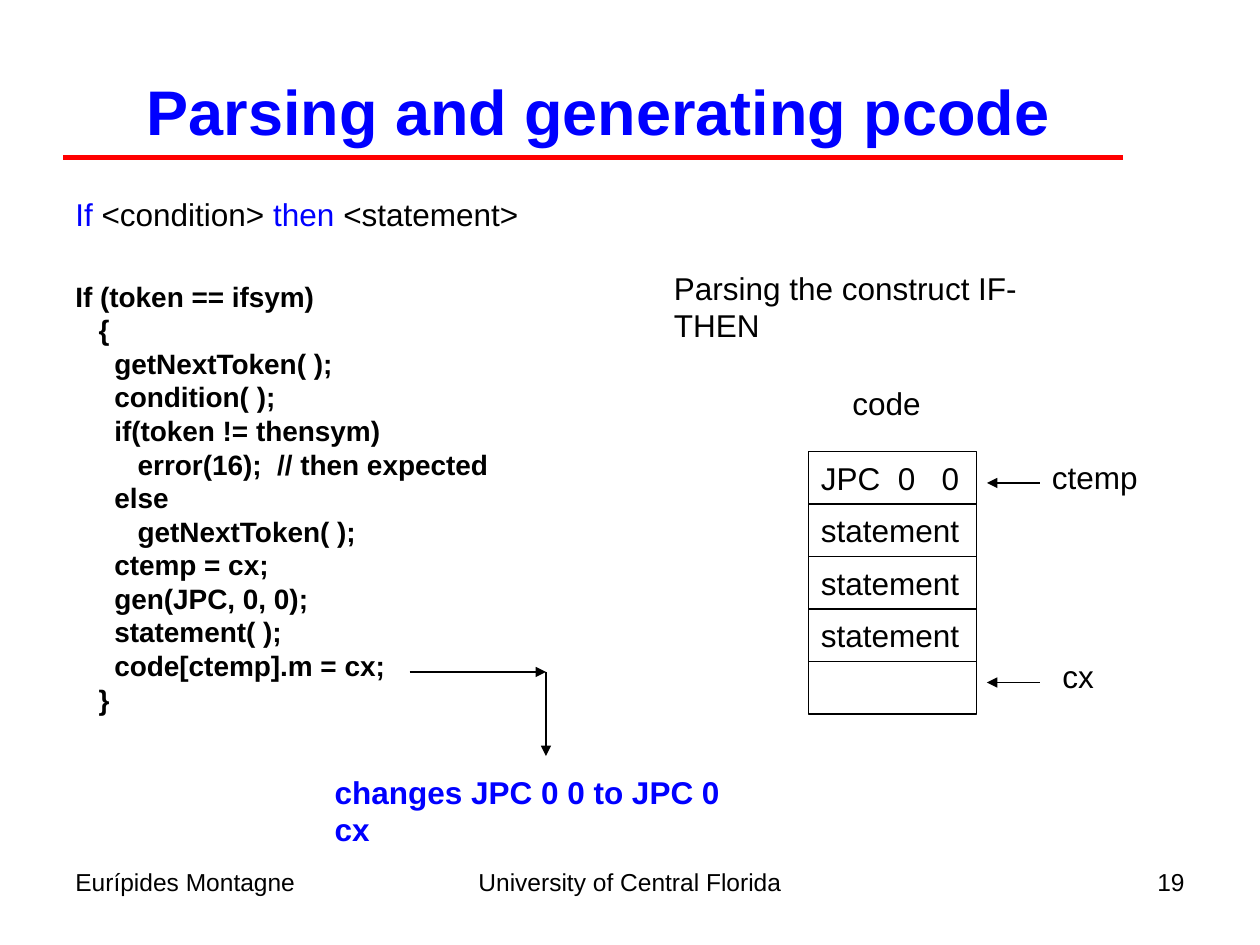
from dataclasses import dataclass

from lxml import etree
from pptx import Presentation
from pptx import util as u
from pptx.dml.color import RGBColor
from pptx.enum import shapes, text
from pptx.oxml.ns import qn

BLACK = RGBColor(0x00, 0x00, 0x00)
BLUE = RGBColor(0x00, 0x00, 0xFF)
RED = RGBColor(0xFF, 0x00, 0x00)
FONT = "Arial"
LEFT, CENTER, RIGHT = text.PP_ALIGN.LEFT, text.PP_ALIGN.CENTER, text.PP_ALIGN.RIGHT

# The slide is a grid of 120 columns by 90 rows
COLUMNS, ROWS = 120, 90
LABEL_ROWS = 4.8
SPACE_WIDTH = 4.45  # points, one space of the bold 16 pt code


@dataclass(frozen=True)
class Label:
    words: str
    col: float
    row: float
    cols: float
    rows: float = LABEL_ROWS
    size: int = 18
    color: RGBColor = BLACK
    bold: bool = False
    align: text.PP_ALIGN = LEFT
    wrap: bool = False


@dataclass(frozen=True)
class Arrow:
    start: tuple[float, float]
    end: tuple[float, float]


LABELS = [
    Label("Parsing the construct IF-THEN", 63, 25, 43.2),
    Label("code", 80, 36, 8.9),
    Label("ctemp", 99, 43, 13, wrap=True),
    Label("cx", 100, 62, 6.2),
    Label("changes JPC 0 0 to JPC 0 cx", 30.7, 73, 43.2, color=BLUE, bold=True),
    Label("Eurípides Montagne", 6, 82, 28, 6.2, 14, wrap=True),
    Label("University of Central Florida", 41, 82, 38, 6.2, 14, align=CENTER, wrap=True),
    Label("19", 86, 82, 28, 6.2, 14, align=RIGHT, wrap=True),
]

ARROWS = [
    Arrow((99, 46), (94, 46)),
    Arrow((99, 65), (94, 65)),
    Arrow((39, 64), (52, 64)),
    Arrow((52, 64), (52, 72)),
]

CODE_CELLS = ["JPC  0   0", "statement", "statement", "statement", ""]
CELL_COL, CELL_ROW, CELL_COLS, CELL_ROWS = 77, 43, 16, 5

# Indent in spaces, then the line
PROGRAM = [
    (0, "If (token == ifsym)"),
    (3, "{"),
    (5, "getNextToken( );"),
    (5, "condition( );"),
    (5, "if(token != thensym)"),
    (8, "error(16);  // then expected"),
    (5, "else"),
    (8, "getNextToken( );"),
    (5, "ctemp = cx;"),
    (5, "gen(JPC, 0, 0);"),
    (5, "statement( );"),
    (5, "code[ctemp].m = cx;"),
    (3, "}"),
]

GRAMMAR = [("If", BLUE), (" <condition> ", BLACK), ("then ", BLUE), ("<statement>", BLACK)]

prs = Presentation()
prs.slide_width, prs.slide_height = u.Inches(10), u.Inches(7.5)
slide = prs.slides.add_slide(prs.slide_layouts[5])


def x(col: float) -> int:
    return round(prs.slide_width * col / COLUMNS)


def y(row: float) -> int:
    return round(prs.slide_height * row / ROWS)


def style(font, size: int, color: RGBColor = BLACK, bold: bool = False) -> None:
    font.name, font.size, font.bold = FONT, u.Pt(size), bold
    font.color.rgb = color


def add_label(label: Label):
    box = slide.shapes.add_textbox(x(label.col), y(label.row), x(label.cols), y(label.rows))
    frame = box.text_frame
    frame.word_wrap = label.wrap
    frame.text = label.words
    for paragraph in frame.paragraphs:
        paragraph.alignment = label.align
        for run in paragraph.runs:
            style(run.font, label.size, label.color, label.bold)
    return frame


def add_line(start: tuple[float, float], end: tuple[float, float], color: RGBColor, width: float):
    line = slide.shapes.add_connector(
        shapes.MSO_CONNECTOR.STRAIGHT, x(start[0]), y(start[1]), x(end[0]), y(end[1]))
    line.line.color.rgb, line.line.width = color, u.Pt(width)
    etree.SubElement(line._element.spPr, qn("a:effectLst"))
    return line


def add_arrow(arrow: Arrow) -> None:
    line = add_line(arrow.start, arrow.end, BLACK, 0.75)
    etree.SubElement(line.line._get_or_add_ln(), qn("a:tailEnd"), type="triangle")


def add_cell(index: int, words: str) -> None:
    cell = slide.shapes.add_shape(
        shapes.MSO_SHAPE.RECTANGLE, x(CELL_COL), y(CELL_ROW + index * CELL_ROWS),
        x(CELL_COLS), y(CELL_ROWS))
    cell.shadow.inherit = False
    cell.fill.background()
    cell.line.color.rgb, cell.line.width = BLACK, u.Pt(0.75)
    if words:
        frame = cell.text_frame
        frame.word_wrap = False
        frame.vertical_anchor = text.MSO_ANCHOR.MIDDLE
        frame.text = words
        frame.paragraphs[0].alignment = LEFT
        style(frame.paragraphs[0].runs[0].font, 18)


# Title and its rule
title = slide.shapes.title
title.left, title.top, title.width, title.height = x(3), y(3), x(108), y(15)
title.text_frame.text = "Parsing and generating pcode"
title.text_frame.vertical_anchor = text.MSO_ANCHOR.MIDDLE
title.text_frame.paragraphs[0].alignment = CENTER
style(title.text_frame.paragraphs[0].runs[0].font, 36, BLUE, True)
add_line((6, 15), (107, 15), RED, 3)

# Grammar rule with coloured keywords
grammar = add_label(Label("", 6, 18, 44.6)).paragraphs[0]
for words, color in GRAMMAR:
    run = grammar.add_run()
    run.text = words
    style(run.font, 18, color)

# Parser program
program = add_label(Label("\n".join(line for _, line in PROGRAM), 6, 26, 47, 43, 16,
                          bold=True, wrap=True))
for paragraph, (indent, _) in zip(program.paragraphs, PROGRAM):
    margin = paragraph._p.get_or_add_pPr()
    margin.set("marL", str(u.Pt(indent * SPACE_WIDTH)))
    margin.set("indent", "0")

# Code memory, labels, footer and arrows
for index, words in enumerate(CODE_CELLS):
    add_cell(index, words)
for label in LABELS:
    add_label(label)
for arrow in ARROWS:
    add_arrow(arrow)

prs.save("out.pptx")
